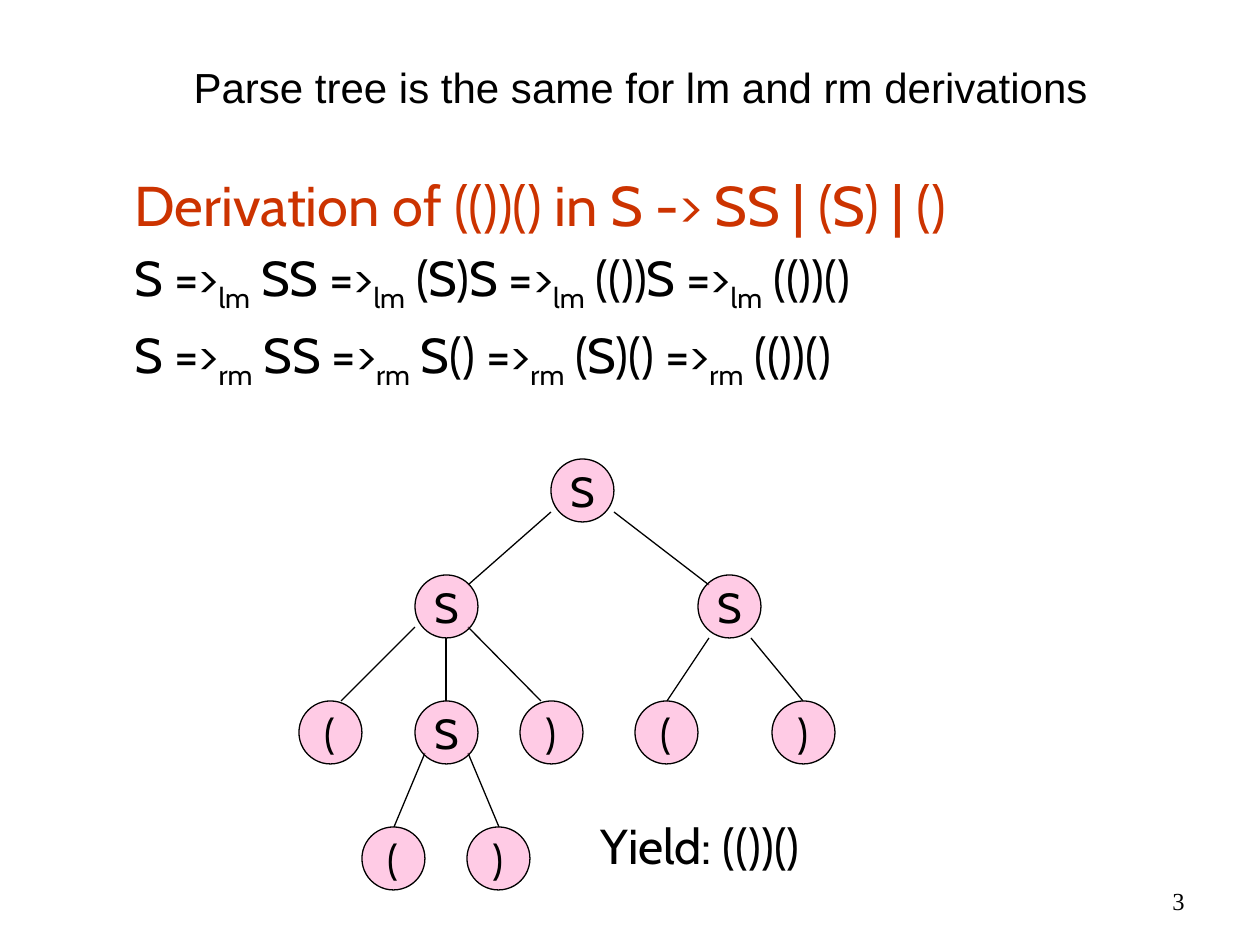
from typing import NamedTuple

from lxml import etree
from pptx import Presentation
from pptx import util as u
from pptx.dml.color import RGBColor
from pptx.enum import shapes, text
from pptx.oxml.ns import qn

SCALE = 914400 / 126  # EMU in one px
SIZE = 63  # node diameter
ROWS = [459, 575, 701, 827]  # node tops, by tree level


class Node(NamedTuple):
    label: str
    left: int
    level: int


class Edge(NamedTuple):
    x1: int
    y1: int
    x2: int
    y2: int


NODES = [
    Node("S", 551, 0),
    Node("S", 415, 1), Node("S", 698, 1),
    Node("(", 299, 2), Node("S", 415, 2), Node(")", 520, 2),
    Node("(", 635, 2), Node(")", 772, 2),
    Node("(", 362, 3), Node(")", 467, 3),
]
EDGES = [
    Edge(551, 512, 468, 585), Edge(614, 512, 709, 585),
    Edge(415, 627, 341, 701), Edge(446, 638, 446, 701), Edge(468, 627, 541, 701),
    Edge(709, 638, 667, 701), Edge(751, 638, 803, 701),
    Edge(425, 753, 394, 827), Edge(468, 753, 499, 827),
]
# Sentential forms of each derivation, keyed by its subscript
STEPS = {
    "lm": ["S", "SS", "(S)S", "(())S", "(())()"],
    "rm": ["S", "SS", "S()", "(S)()", "(())()"],
}


def px(n: int) -> u.Emu:
    return u.Emu(round(n * SCALE))


def rgb(code: str) -> RGBColor:
    return RGBColor.from_string(code)


def style(par, size: int, face: str = "Cabin", code: str = "000000",
          align=text.PP_ALIGN.LEFT) -> None:
    par.alignment = align
    par.font.size = u.Pt(size)
    par.font.name = face
    par.font.color.rgb = rgb(code)


def place(shape, x: int, y: int, w: int, h: int, anchor=text.MSO_ANCHOR.TOP):
    shape.left, shape.top, shape.width, shape.height = map(px, (x, y, w, h))
    frame = shape.text_frame
    frame.word_wrap = True
    frame.auto_size = text.MSO_AUTO_SIZE.NONE
    frame.vertical_anchor = anchor
    return frame


def plain(par) -> None:
    """Drop the bullet and its indent."""
    props = par._p.get_or_add_pPr()
    props.set("marL", "0")
    props.set("indent", "0")
    props.insert_element_before(
        props.makeelement(qn("a:buNone"), {}), "a:tabLst", "a:defRPr", "a:extLst")


def derive(par, mark: str, forms: list[str]) -> None:
    """Write the forms, joined by arrows with a subscript."""
    last = len(forms) - 1
    for i, form in enumerate(forms):
        lead = " " if i else ""
        par.add_run().text = lead + form + (" =>" if i < last else "")
        if i < last:
            sub = par.add_run()
            sub.text = mark
            sub.font._element.set("baseline", "-25000")


def draw_edge(slide, edge: Edge) -> None:
    line = slide.shapes.add_connector(
        shapes.MSO_CONNECTOR.STRAIGHT, *map(px, edge))
    line.line.color.rgb = rgb("000000")
    line.line.width = u.Pt(0.75)
    etree.SubElement(line._element.spPr, qn("a:effectLst"))


def draw_node(slide, node: Node) -> None:
    oval = slide.shapes.add_shape(
        shapes.MSO_SHAPE.OVAL, px(node.left), px(ROWS[node.level]),
        px(SIZE), px(SIZE))
    oval.shadow.inherit = False
    oval.fill.solid()
    oval.fill.fore_color.rgb = rgb("FF99CC")
    tint = oval._element.spPr.find(".//" + qn("a:srgbClr"))
    etree.SubElement(tint, qn("a:alpha"), val="50000")
    oval.line.color.rgb = rgb("000000")
    oval.line.width = u.Pt(0.75)
    frame = oval.text_frame
    frame.word_wrap = False
    frame.vertical_anchor = text.MSO_ANCHOR.MIDDLE
    frame.text = node.label
    style(frame.paragraphs[0], 24, align=text.PP_ALIGN.CENTER)


def add_note(slide, words: str, x: int, y: int, w: int, h: int, anchor):
    box = slide.shapes.add_textbox(0, 0, 0, 0)
    frame = place(box, x, y, w, h, anchor)
    frame.text = words
    return frame.paragraphs[0]


def main() -> None:
    deck = Presentation()
    deck.slide_width, deck.slide_height = px(1260), px(945)
    slide = deck.slides.add_slide(deck.slide_layouts[1])
    title, body = slide.placeholders

    # Title
    frame = place(title, 181, 55, 940, 63)
    frame.text = "Parse tree is the same for lm and rm derivations"
    style(frame.paragraphs[0], 24, "Arial")

    # Grammar and its two derivations
    frame = place(body, 122, 164, 995, 223)
    head = frame.paragraphs[0]
    head.text = "Derivation of (())() in S -> SS | (S) | ()"
    style(head, 32, code="CC3300")
    plain(head)
    for mark, forms in STEPS.items():
        par = frame.add_paragraph()
        style(par, 28)
        plain(par)
        derive(par, mark, forms)

    # Parse tree
    for edge in EDGES:
        draw_edge(slide, edge)
    for node in NODES:
        draw_node(slide, node)

    # Yield and page number
    style(add_note(slide, "Yield: (())()", 588, 809, 292, 72,
                   text.MSO_ANCHOR.TOP), 28)
    style(add_note(slide, "3", 903, 876, 294, 50, text.MSO_ANCHOR.MIDDLE),
          14, "Times New Roman", align=text.PP_ALIGN.RIGHT)

    deck.save("out.pptx")


if __name__ == "__main__":
    main()
